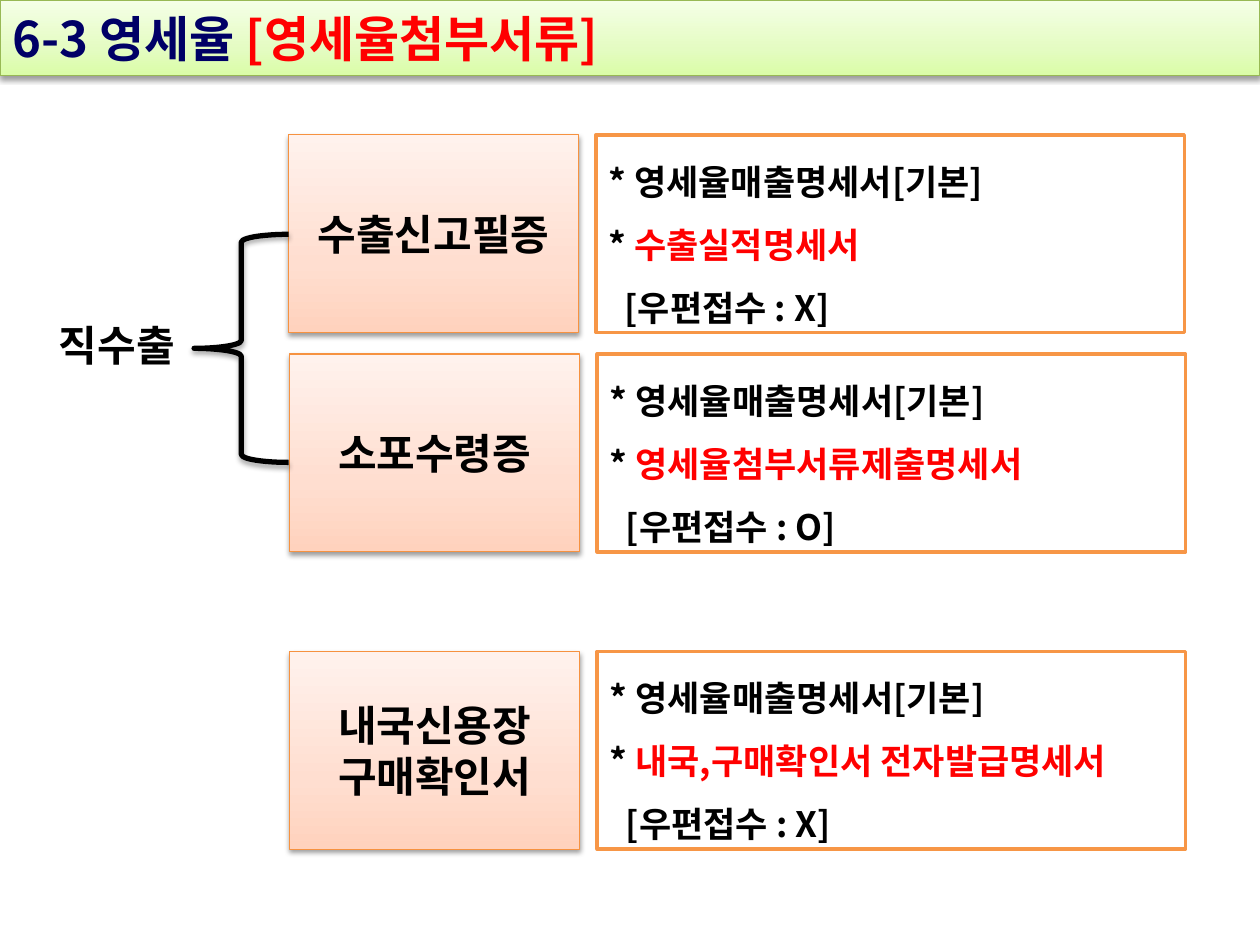
from copy import deepcopy

from lxml.etree import SubElement
from pptx import Presentation
from pptx.dml.color import RGBColor
from pptx.enum.shapes import MSO_SHAPE as Kind
from pptx.enum.text import MSO_ANCHOR as Anchor, MSO_AUTO_SIZE as Fit, PP_ALIGN as Align
from pptx.oxml.ns import qn
from pptx.util import Inches, Pt

FONT = "Noto Sans CJK KR"
BLACK = RGBColor(0x00, 0x00, 0x00)
WHITE = RGBColor(0xFF, 0xFF, 0xFF)
RED = RGBColor(0xFF, 0x00, 0x00)
NAVY = RGBColor(0x00, 0x00, 0x66)
LEAF = RGBColor(0x98, 0xB9, 0x55)
AMBER = RGBColor(0xF6, 0x92, 0x40)
ORANGE = RGBColor(0xF7, 0x96, 0x46)
GREENS = [RGBColor(0xDA, 0xFD, 0xA7), RGBColor(0xE4, 0xFC, 0xC2), RGBColor(0xF5, 0xFF, 0xE7)]
PEACHES = [RGBColor(0xFF, 0xD2, 0xBD), RGBColor(0xFF, 0xDE, 0xD0), RGBColor(0xFF, 0xF2, 0xED)]


class Page:
    def __init__(self, deck):
        self.slide = deck.slides.add_slide(deck.slide_layouts[5])
        self.shapes = self.slide.shapes

    def letter(self, shape, lines, size, align=Align.LEFT, anchor=Anchor.MIDDLE):
        """Fill a shape with lines, each a list of (text, colour) runs."""
        frame = shape.text_frame
        frame.word_wrap = True
        frame.auto_size = Fit.NONE
        frame.vertical_anchor = anchor
        for i, line in enumerate(lines):
            para = frame.add_paragraph() if i else frame.paragraphs[0]
            para.alignment = align
            for text, color in line:
                run = para.add_run()
                run.text = text
                font = run.font
                font.name, font.size, font.bold = FONT, Pt(size), True
                font.color.rgb = color
                SubElement(font._element, qn("a:ea"), typeface=FONT)
        return frame

    def shade(self, shape, colors):
        """Blend three colours from the bottom edge to the top."""
        fill = shape.fill
        fill.gradient()
        fill.gradient_angle = 90
        stops = shape._element.spPr.find(".//" + qn("a:gsLst"))
        stops.append(deepcopy(stops[-1]))
        for stop, place, color in zip(fill.gradient_stops, (0, 0.35, 1), colors):
            stop.position = place
            stop.color.rgb = color

    def edge(self, shape, color, width):
        shape.line.color.rgb = color
        shape.line.width = Pt(width)
        shape.shadow.inherit = False

    def drop(self, shape, dist=1.6, alpha=38):
        """Cast a soft shadow straight down."""
        effects = shape._element.spPr.find(qn("a:effectLst"))
        outer = SubElement(effects, qn("a:outerShdw"), blurRad=str(Pt(3.1)),
                           dist=str(Pt(dist)), dir="5400000", rotWithShape="0")
        tint = SubElement(outer, qn("a:srgbClr"), val="000000")
        SubElement(tint, qn("a:alpha"), val=str(alpha * 1000))

    def add(self, kind, left, top, width, height):
        return self.shapes.add_shape(kind, Inches(left), Inches(top), Inches(width), Inches(height))

    def title(self, runs):
        bar = self.shapes.title
        bar.left, bar.top, bar.width, bar.height = 0, 0, Inches(10), Inches(0.6)
        self.shade(bar, GREENS)
        self.edge(bar, LEAF, 0.75)
        self.drop(bar)
        self.letter(bar, [runs], 28)

    def label(self, left, top, names):
        box = self.add(Kind.RECTANGLE, left, top, 2.3, 1.57)
        self.shade(box, PEACHES)
        self.edge(box, AMBER, 0.75)
        self.drop(box)
        self.letter(box, [[(name, BLACK)] for name in names], 24, Align.CENTER)

    def detail(self, left, top, form, mail):
        box = self.add(Kind.RECTANGLE, left, top, 4.67, 1.57)
        box.fill.solid()
        box.fill.fore_color.rgb = WHITE
        self.edge(box, ORANGE, 2)
        lines = [[("* 영세율매출명세서[기본]", BLACK)],
                 [("* ", BLACK), (form, RED)],
                 [(f"[우편접수 : {mail}]", BLACK)]]
        paras = self.letter(box, lines, 20).paragraphs
        for para in paras:
            para.line_spacing = 1.5
        paras[-1]._p.get_or_add_pPr().set("marL", str(Inches(0.13)))

    def brace(self, left, top, width, height):
        mark = self.add(Kind.LEFT_BRACE, left, top, width, height)
        mark.fill.background()
        self.edge(mark, BLACK, 3)
        self.drop(mark, 1.8, 35)

    def text(self, left, top, width, height, words):
        box = self.shapes.add_textbox(Inches(left), Inches(top), Inches(width), Inches(height))
        self.letter(box, [[(words, BLACK)]], 24, anchor=Anchor.TOP)


def main():
    deck = Presentation()
    deck.slide_width, deck.slide_height = Inches(10), Inches(7.5)
    page = Page(deck)
    page.title([("6-3 영세율 ", NAVY), ("[영세율첨부서류]", RED)])
    rows = [
        (2.29, 1.07, ["수출신고필증"], "수출실적명세서", "X"),
        (2.3, 2.81, ["소포수령증"], "영세율첨부서류제출명세서", "O"),
        (2.3, 5.17, ["내국신용장", "구매확인서"], "내국,구매확인서 전자발급명세서", "X"),
    ]
    for left, top, names, form, mail in rows:
        page.label(left, top, names)
        page.detail(left + 2.44, top, form, mail)
    page.brace(1.54, 1.86, 0.75, 1.81)
    page.text(0.37, 2.49, 1.64, 0.5, "직수출")
    deck.save("out.pptx")


if __name__ == "__main__":
    main()
